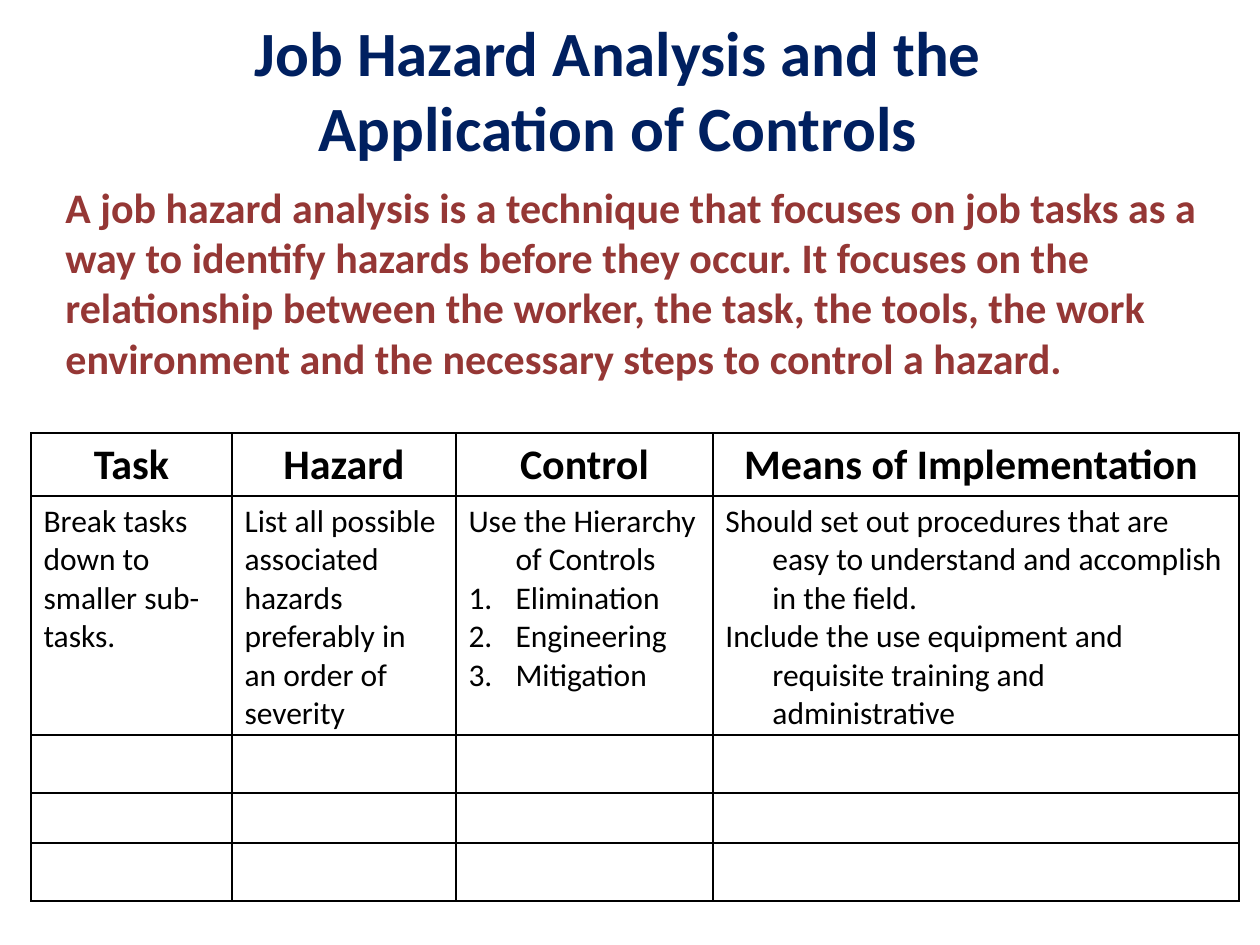
import pptx
import pptx.util
import pptx.dml.color
import pptx.enum.text
import pptx.oxml
import pptx.oxml.ns
import lxml.etree

PX = 914400 // 126
NAVY = pptx.dml.color.RGBColor(0x00, 0x20, 0x60)
BRICK = pptx.dml.color.RGBColor(0x95, 0x37, 0x35)
BLACK = pptx.dml.color.RGBColor(0x00, 0x00, 0x00)
CENTER = pptx.enum.text.PP_ALIGN.CENTER
LEFT = pptx.enum.text.PP_ALIGN.LEFT


def write_text(frame, text, size=18, color=BLACK, bold=False, align=LEFT, hanging=0, numbered_from=None):
    for index, line in enumerate(text.split("\n")):
        paragraph = frame.paragraphs[0] if index == 0 else frame.add_paragraph()
        paragraph.text = line
        paragraph.alignment = align
        for run in paragraph.runs:
            run.font.name = "Calibri"
            run.font.size = pptx.util.Pt(size)
            run.font.bold = bold
            run.font.color.rgb = color
        properties = paragraph._p.get_or_add_pPr()
        if hanging:
            properties.set("marL", str(hanging * PX))
            properties.set("indent", str(-hanging * PX))
        if numbered_from is not None and index >= numbered_from:
            number = lxml.etree.SubElement(properties, pptx.oxml.ns.qn("a:buAutoNum"))
            number.set("type", "arabicPeriod")


def add_borders(cell):
    properties = cell._tc.get_or_add_tcPr()
    for position, side in enumerate(("lnL", "lnR", "lnT", "lnB")):
        border = pptx.oxml.parse_xml(
            f'<a:{side} {pptx.oxml.ns.nsdecls("a")} w="12700"><a:solidFill>'
            f'<a:srgbClr val="{BLACK}"/></a:solidFill></a:{side}>'
        )
        properties.insert(position, border)


presentation = pptx.Presentation()
presentation.slide_width = pptx.util.Inches(10)
presentation.slide_height = pptx.util.Inches(7.5)
slide = presentation.slides.add_slide(presentation.slide_layouts[5])

title = slide.shapes.title
title.left, title.top, title.width, title.height = 0, 14 * PX, 1236 * PX, 150 * PX
title_frame = title.text_frame
title_frame.margin_top = title_frame.margin_bottom = 0
title_frame.vertical_anchor = pptx.enum.text.MSO_ANCHOR.MIDDLE
write_text(title_frame, "Job Hazard Analysis and the\vApplication of Controls",
           size=36, color=NAVY, bold=True, align=CENTER)

definition = slide.shapes.add_textbox(53 * PX, 175 * PX, 1166 * PX, 217 * PX)
definition.text_frame.word_wrap = True
definition.text_frame.auto_size = pptx.enum.text.MSO_AUTO_SIZE.SHAPE_TO_FIT_TEXT
write_text(
    definition.text_frame,
    "A job hazard analysis is a technique that focuses on job tasks as a way to identify hazards "
    "before they occur. It focuses on the relationship between the worker, the task, the tools, "
    "the work environment and the necessary steps to control a hazard.",
    size=24, color=BRICK, bold=True,
)

column_widths = [201, 224, 257, 526]
row_heights = [63, 239, 58, 50, 58]
table = slide.shapes.add_table(
    len(row_heights), len(column_widths), 31 * PX, 433 * PX,
    sum(column_widths) * PX, sum(row_heights) * PX,
).table
table.first_row = False
table.horz_banding = False
for column, width in zip(table.columns, column_widths):
    column.width = width * PX
for row, height in zip(table.rows, row_heights):
    row.height = height * PX
for cell in table.iter_cells():
    cell.fill.background()
    cell.margin_bottom = 2 * PX
    add_borders(cell)

headings = ["Task", "Hazard", "Control", "Means of Implementation "]
for column, heading in enumerate(headings):
    write_text(table.cell(0, column).text_frame, heading, size=24, bold=True, align=CENTER)

guidance = [
    ("Break tasks down to smaller sub-tasks.", {}),
    ("List all possible associated hazards preferably in an order of severity", {}),
    ("Use the Hierarchy of Controls\nElimination\nEngineering\nMitigation",
     {"hanging": 47, "numbered_from": 1}),
    ("Should set out procedures that are easy to understand and accomplish in the field.\n"
     "Include the use equipment and requisite training and administrative", {"hanging": 47}),
]
for column, (text, text_format) in enumerate(guidance):
    write_text(table.cell(1, column).text_frame, text, **text_format)

presentation.save("out.pptx")
